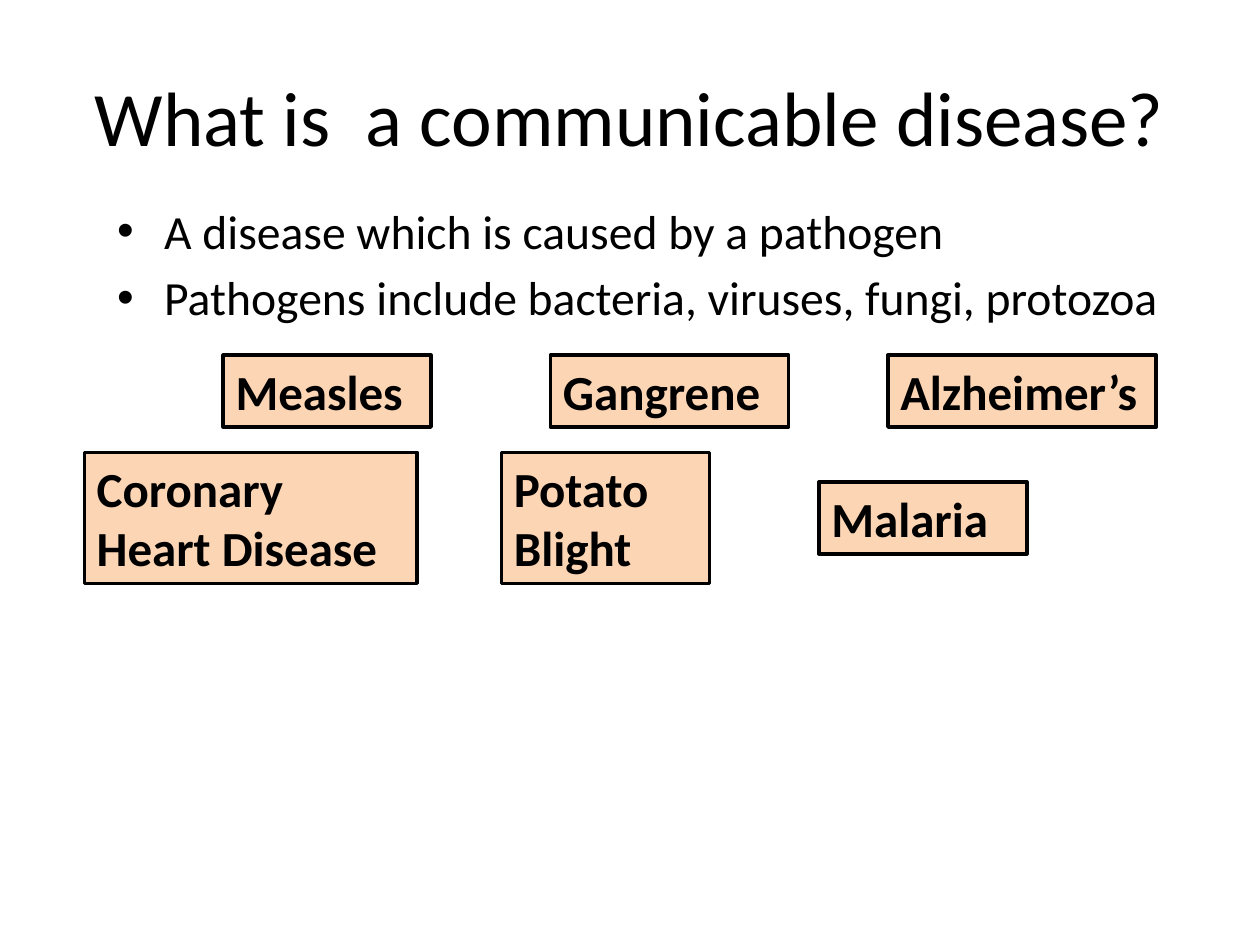
from dataclasses import dataclass

from lxml.etree import SubElement
from pptx import Presentation
from pptx.dml.color import RGBColor
from pptx.enum.shapes import MSO_SHAPE
from pptx.enum.text import MSO_ANCHOR, MSO_AUTO_SIZE, PP_ALIGN
from pptx.oxml.ns import qn
from pptx.util import Cm, Pt


@dataclass(frozen=True)
class Theme:
    font: str = "Calibri"
    ink: RGBColor = RGBColor(0x00, 0x00, 0x00)
    card_fill: RGBColor = RGBColor(0xFC, 0xD5, 0xB5)
    title_size: float = 44
    body_size: float = 27.2
    card_size: float = 28


THEME = Theme()

DEFINITION = [
    "A disease which is caused by a pathogen",
    "Pathogens include bacteria, viruses, fungi, protozoa",
]

# Rows of (height, cards); a card is (label, left, width, lines), in cm
ONE_LINE, TWO_LINES = 1.45, 2.64
ROW_GAP = 0.51
DISEASE_ROWS = [
    (ONE_LINE, [
        ("Measles", 2.8, 4.19, 1),
        ("Gangrene", 9.4, 4.8, 1),
        ("Alzheimer’s", 16.2, 5.41, 1),
    ]),
    (TWO_LINES, [
        ("Coronary Heart Disease", 0, 6.71, 2),
        ("Potato Blight", 8.41, 4.19, 2),
        ("Malaria", 14.81, 4.19, 1),
    ]),
]


def style_runs(paragraph, size, bold=False):
    for run in paragraph.runs:
        run.font.name = THEME.font
        run.font.size = Pt(size)
        run.font.bold = bold
        run.font.color.rgb = THEME.ink


def add_title(slide, left, top, width, height):
    title = slide.shapes.add_textbox(Cm(left), Cm(top), Cm(width), Cm(height))
    frame = title.text_frame
    frame.word_wrap = True
    frame.vertical_anchor = MSO_ANCHOR.MIDDLE
    frame.text = "What is  a communicable disease?"
    frame.paragraphs[0].alignment = PP_ALIGN.CENTER
    style_runs(frame.paragraphs[0], THEME.title_size)


def add_bullet(paragraph):
    properties = paragraph._p.get_or_add_pPr()
    indent = Cm(0.95)
    properties.set("marL", str(indent))
    properties.set("indent", str(-indent))
    SubElement(properties, qn("a:buFont"), typeface="Arial")
    SubElement(properties, qn("a:buChar"), char="•")


def add_definition(slide, left, top, width, height):
    definition = slide.shapes.add_textbox(Cm(left), Cm(top), Cm(width), Cm(height))
    frame = definition.text_frame
    frame.word_wrap = True
    frame.text = "\n".join(DEFINITION)
    for point in frame.paragraphs:
        point.space_before = Pt(THEME.body_size * 0.2)
        add_bullet(point)
        style_runs(point, THEME.body_size)


def add_card(slide, label, left, top, width, height):
    card = slide.shapes.add_shape(
        MSO_SHAPE.RECTANGLE, Cm(left), Cm(top), Cm(width), Cm(height))
    card.shadow.inherit = False
    card.fill.solid()
    card.fill.fore_color.rgb = THEME.card_fill
    card.line.color.rgb = THEME.ink
    card.line.width = Pt(2)
    frame = card.text_frame
    frame.word_wrap = True
    frame.auto_size = MSO_AUTO_SIZE.SHAPE_TO_FIT_TEXT
    frame.vertical_anchor = MSO_ANCHOR.TOP
    frame.text = label
    frame.paragraphs[0].alignment = PP_ALIGN.LEFT
    style_runs(frame.paragraphs[0], THEME.card_size, bold=True)


def add_disease_cards(slide, left, top):
    for row_height, cards in DISEASE_ROWS:
        for label, offset, width, lines in cards:
            height = ONE_LINE if lines == 1 else TWO_LINES
            # Each card is centred vertically in its row
            card_top = top + (row_height - height) / 2
            add_card(slide, label, left + offset, card_top, width, height)
        top += row_height + ROW_GAP


def main():
    presentation = Presentation()
    presentation.slide_width = Cm(25.4)
    presentation.slide_height = Cm(19.05)
    slide = presentation.slides.add_slide(presentation.slide_layouts[6])

    # Heading and definition
    add_title(slide, 1.27, 0.74, 22.86, 3.18)
    add_definition(slide, 2.11, 3.94, 21.82, 2.69)

    # Diseases to sort
    add_disease_cards(slide, 1.7, 7.16)

    presentation.save("out.pptx")


if __name__ == "__main__":
    main()
